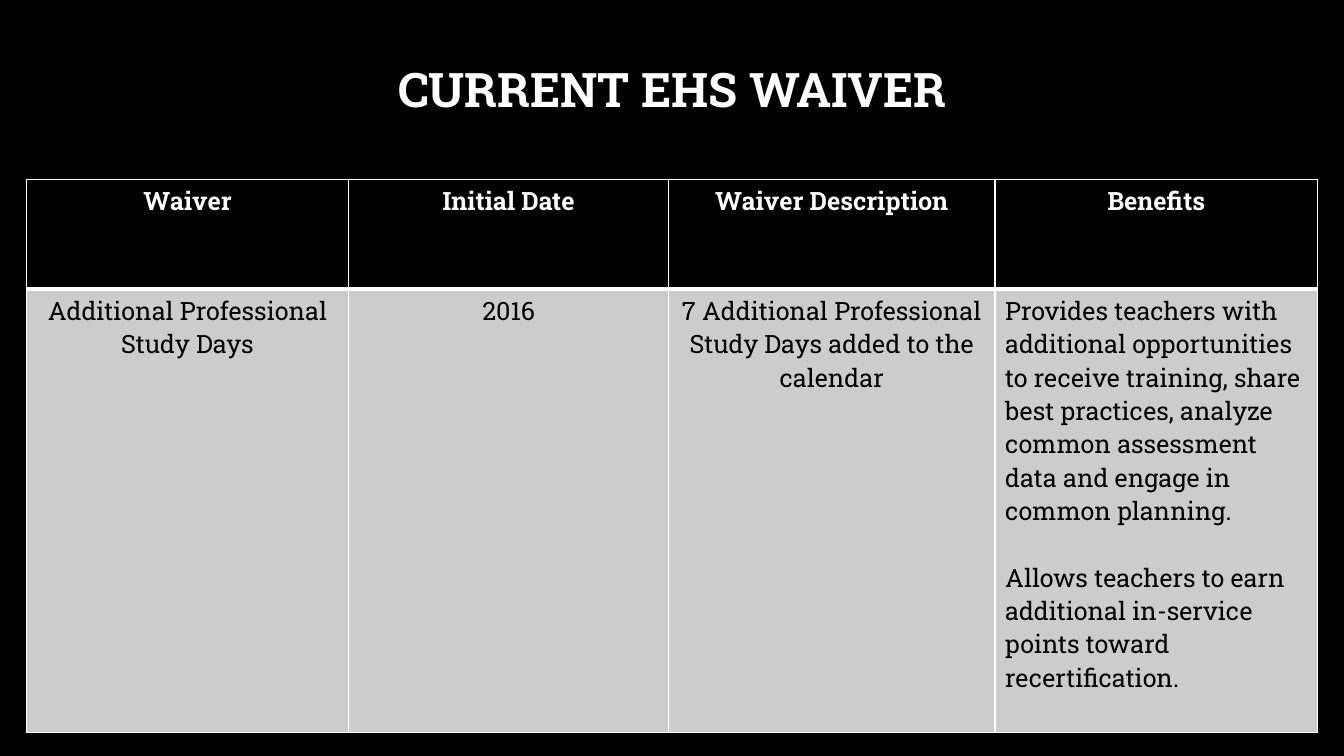
from pptx import Presentation
from pptx.util import Inches, Pt
from pptx.dml.color import RGBColor
from pptx.enum.text import PP_ALIGN, MSO_ANCHOR
from lxml.etree import SubElement
from pptx.oxml.ns import qn

WIDE, HIGH = 13.33, 7.5
FONT = "Roboto Slab"
HUES = {"back": "000000", "light": "FFFFFF", "dark": "000000", "body": "CCCCCC"}

HEADS = ["Waiver", "Initial Date", "Waiver Description", "Benefits"]
FACTS = [
    ["Additional Professional Study Days"],
    ["2016"],
    ["7 Additional Professional Study Days added to the calendar"],
    ["Provides teachers with additional opportunities to receive training, "
     "share best practices, analyze common assessment data and engage in "
     "common planning.",
     "Allows teachers to earn additional in-service points toward "
     "recertification."],
]
COLS = [3.2, 3.17, 3.24, 3.2]
ROWS = [1.09, 4.4]
HEAD = {"size": Pt(18), "bold": True, "name": FONT}
BODY = {**HEAD, "bold": False}
TITLE = {**HEAD, "size": Pt(34)}


def hue(key):
    return RGBColor.from_string(HUES[key])


def write(frame, lines, form, ink, align, gap=0):
    """Fill a text frame, one paragraph per line, with a gap between them."""
    for i, line in enumerate(lines):
        para = frame.add_paragraph() if i else frame.paragraphs[0]
        para.alignment = align
        if i:
            para.space_before = Pt(gap)
        run = para.add_run()
        run.text = line
        for key, value in form.items():
            setattr(run.font, key, value)
        run.font.color.rgb = hue(ink)


def edge(cell, sides):
    """Draw the cell borders; sides maps each tag to a width in points."""
    props = cell._tc.get_or_add_tcPr()
    for i, (side, width) in enumerate(sides.items()):
        line = SubElement(props, qn("a:" + side), w=str(Pt(width)))
        fill = SubElement(line, qn("a:solidFill"))
        SubElement(fill, qn("a:srgbClr"), val=HUES["light"])
        # Borders come before the fill in the cell properties
        props.insert(i, line)


def title(slide, box):
    head = slide.shapes.title
    head.left, head.top, head.width, head.height = map(Inches, box)
    frame = head.text_frame
    frame.word_wrap = True
    frame.vertical_anchor = MSO_ANCHOR.MIDDLE
    write(frame, ["CURRENT EHS WAIVER"], TITLE, "light", PP_ALIGN.CENTER)
    frame.paragraphs[0].line_spacing = 0.9


def table(slide, box):
    grid = slide.shapes.add_table(len(ROWS), len(COLS), *map(Inches, box)).table
    for col, width in zip(grid.columns, COLS):
        col.width = Inches(width)
    for row, height in zip(grid.rows, ROWS):
        row.height = Inches(height)

    looks = [([[head] for head in HEADS], HEAD, "light", "back"),
             (FACTS, BODY, "dark", "body")]
    for r, (texts, form, ink, fill) in enumerate(looks):
        for c, lines in enumerate(texts):
            cell = grid.cell(r, c)
            cell.fill.solid()
            cell.fill.fore_color.rgb = hue(fill)
            align = PP_ALIGN.LEFT if len(lines) > 1 else PP_ALIGN.CENTER
            write(cell.text_frame, lines, form, ink, align, gap=24)
            edge(cell, {"lnL": 1, "lnR": 1, "lnT": 1 if r == 0 else 3,
                        "lnB": 3 if r == 0 else 1})


def main():
    deck = Presentation()
    deck.slide_width, deck.slide_height = Inches(WIDE), Inches(HIGH)
    slide = deck.slides.add_slide(deck.slide_layouts[5])
    slide.background.fill.solid()
    slide.background.fill.fore_color.rgb = hue("back")
    title(slide, (1.01, 0.19, 11.32, 1.45))
    table(slide, (0.26, 1.78, sum(COLS), sum(ROWS)))
    deck.save("out.pptx")


if __name__ == "__main__":
    main()
